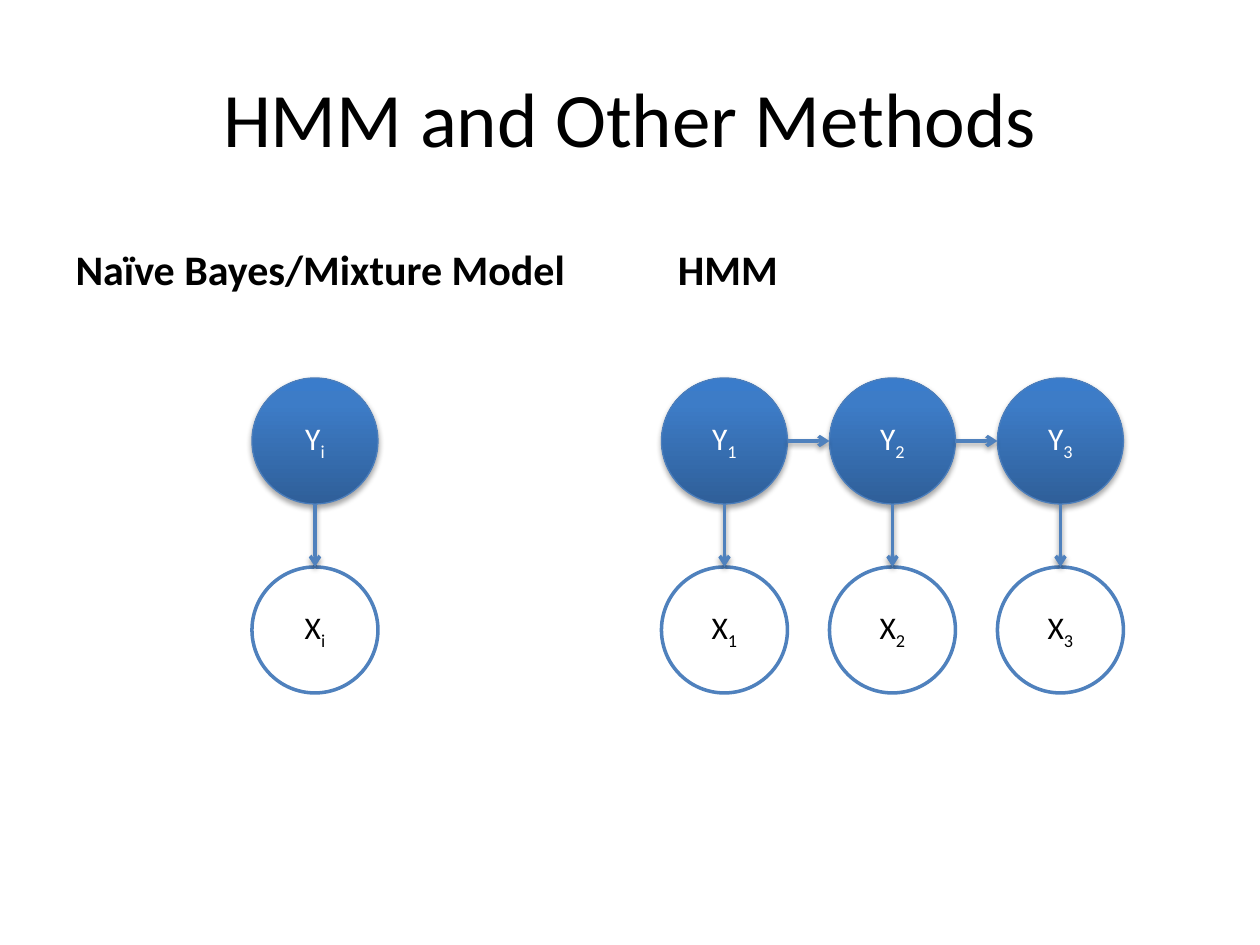
"""Build a slide comparing the naïve Bayes/mixture model with an HMM."""
from dataclasses import dataclass

from lxml.etree import SubElement
from pptx import Presentation
from pptx.dml.color import RGBColor
from pptx.enum.shapes import MSO_CONNECTOR as Connector, MSO_SHAPE as Shape
from pptx.enum.text import MSO_ANCHOR as Anchor, PP_ALIGN as Align
from pptx.oxml.ns import qn
from pptx.util import Inches, Pt

COLORS = {
    "black": "000000",
    "white": "FFFFFF",
    "accent": "4F81BD",
    "state_line": "4B7EBC",
    "state_bottom": "2F5F99",
    "state_middle": "3D7CC7",
    "state_top": "3A7CCB",
}
FONT = "Calibri"
DIAMETER = 1
STATE_TOP = 3
OBSERVED_TOP = 4.5
HMM_LEFT = 5.25
HMM_STEP = 4 / 3


@dataclass(frozen=True)
class Heading:
    index: int
    text: str
    box: tuple[float, float, float, float]
    size: float
    bold: bool


@dataclass(frozen=True)
class Column:
    left: float
    subscript: str


HEADINGS = [
    Heading(0, "HMM and Other Methods", (0.5, 0.3, 9, 1.25), 44, False),
    Heading(1, "Naïve Bayes/Mixture Model", (0.5, 1.68, 4.42, 0.7), 24, True),
    Heading(3, "HMM", (5.28, 1.68, 4.02, 0.7), 24, True),
]
MIXTURE = Column(2, "i")
CHAIN = [Column(HMM_LEFT + step * HMM_STEP, str(step + 1)) for step in range(3)]


def rgb(name: str) -> RGBColor:
    return RGBColor.from_string(COLORS[name])


def add_run(paragraph, text: str, size: float, color: str):
    run = paragraph.add_run()
    run.text = text
    run.font.name = FONT
    run.font.size = Pt(size)
    run.font.color.rgb = rgb(color)
    return run


def add_heading(slide, heading: Heading) -> None:
    shape = slide.placeholders[heading.index]
    shape.left, shape.top, shape.width, shape.height = map(Inches, heading.box)
    paragraph = shape.text_frame.paragraphs[0]
    add_run(paragraph, heading.text, heading.size, "black").font.bold = heading.bold


def add_color(parent, name: str):
    return SubElement(parent, qn("a:srgbClr"), val=COLORS[name])


def add_shadow(shape, opacity: int, distance: float) -> None:
    effects = SubElement(shape._element.spPr, qn("a:effectLst"))
    shadow = SubElement(
        effects, qn("a:outerShdw"), blurRad=str(Pt(3.15)), dist=str(Pt(distance)),
        dir="5400000", rotWithShape="0",
    )
    SubElement(add_color(shadow, "black"), qn("a:alpha"), val=str(opacity * 1000))


def set_state_gradient(shape) -> None:
    shape.fill.gradient()
    shape.fill.gradient_angle = 90
    stops = shape._element.spPr.find(f"{qn('a:gradFill')}/{qn('a:gsLst')}")
    for stop in list(stops):
        stops.remove(stop)
    for percent, name in ((0, "state_bottom"), (80, "state_middle"), (100, "state_top")):
        add_color(SubElement(stops, qn("a:gs"), pos=str(percent * 1000)), name)


def add_node(slide, letter: str, column: Column, top: float, is_state: bool) -> None:
    shape = slide.shapes.add_shape(
        Shape.OVAL, *map(Inches, (column.left, top, DIAMETER, DIAMETER))
    )
    if is_state:
        set_state_gradient(shape)
    else:
        shape.fill.solid()
        shape.fill.fore_color.rgb = rgb("white")
    shape.line.color.rgb = rgb("state_line" if is_state else "accent")
    shape.line.width = Pt(0.75 if is_state else 2)
    if is_state:
        add_shadow(shape, 35, 1.8)
    else:
        shape.shadow.inherit = False
    shape.text_frame.vertical_anchor = Anchor.MIDDLE
    paragraph = shape.text_frame.paragraphs[0]
    paragraph.alignment = Align.CENTER
    color = "white" if is_state else "black"
    add_run(paragraph, letter, 18, color)
    subscript = add_run(paragraph, column.subscript, 18, color)
    subscript.font._element.set("baseline", "-25000")


def add_arrow(slide, start: tuple[float, float], end: tuple[float, float]) -> None:
    arrow = slide.shapes.add_connector(Connector.STRAIGHT, *map(Inches, start + end))
    arrow.line.color.rgb = rgb("accent")
    arrow.line.width = Pt(2)
    SubElement(arrow.line._get_or_add_ln(), qn("a:tailEnd"), type="arrow")
    add_shadow(arrow, 38, 1.6)


def add_column(slide, column: Column) -> None:
    add_node(slide, "X", column, OBSERVED_TOP, False)
    add_node(slide, "Y", column, STATE_TOP, True)
    center = column.left + DIAMETER / 2
    add_arrow(slide, (center, STATE_TOP + DIAMETER), (center, OBSERVED_TOP))


def main() -> None:
    presentation = Presentation()
    presentation.slide_width, presentation.slide_height = Inches(10), Inches(7.5)
    slide = presentation.slides.add_slide(
        presentation.slide_layouts.get_by_name("Comparison")
    )
    for heading in HEADINGS:
        add_heading(slide, heading)
    for placeholder in list(slide.placeholders):
        if not placeholder.text_frame.text:
            placeholder._element.getparent().remove(placeholder._element)
    for column in [MIXTURE, *CHAIN]:
        add_column(slide, column)
    middle = STATE_TOP + DIAMETER / 2
    for source, target in zip(CHAIN, CHAIN[1:]):
        add_arrow(slide, (source.left + DIAMETER, middle), (target.left, middle))
    presentation.save("out.pptx")


if __name__ == "__main__":
    main()
